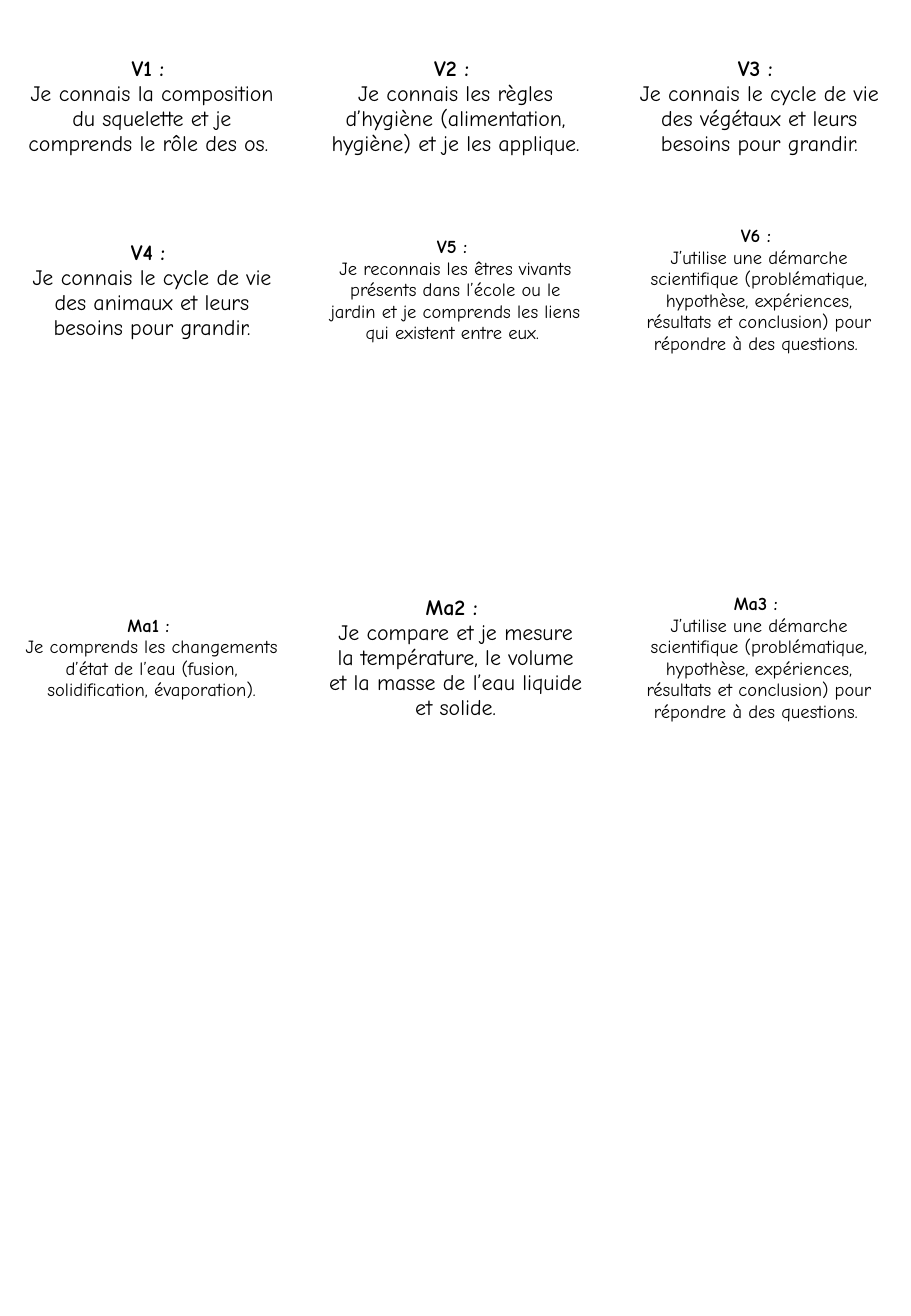
from pptx import Presentation
from pptx import util as u
from pptx.dml.color import RGBColor
from pptx.enum import text

PX = 9144  # 100 px to the inch
COLS, ROWS = 3, 7
FONT = "Comic Neue"
LARGE, SMALL = 13, 11

METHOD = ("J’utilise une démarche scientifique (problématique, hypothèse, "
          "expériences, résultats et conclusion) pour répondre à des questions. ")

# Skills by table row: code, size, sentence
SKILLS = {
    0: [("V1", LARGE, "Je connais la composition du squelette et je comprends "
                      "le rôle des os. "),
        ("V2", LARGE, "Je connais les règles d’hygiène (alimentation, hygiène) "
                      "et je les applique. "),
        ("V3", LARGE, "Je connais le cycle de vie des végétaux et leurs "
                      "besoins pour grandir.")],
    1: [("V4", LARGE, "Je connais le cycle de vie des animaux et leurs "
                      "besoins pour grandir."),
        ("V5", SMALL, "Je reconnais les êtres vivants présents dans l’école ou "
                      "le jardin et je comprends les liens qui existent entre eux. "),
        ("V6", SMALL, METHOD)],
    3: [("Ma1", SMALL, "Je comprends les changements d’état de l’eau (fusion, "
                       "solidification, évaporation)."),
        ("Ma2", LARGE, "Je compare et je mesure la température, le volume et "
                       "la masse de l’eau liquide et solide."),
        ("Ma3", SMALL, METHOD)],
}


def px(n):
    return u.Emu(round(n * PX))


def paint(fill, color):
    fill.solid()
    fill.fore_color.rgb = RGBColor.from_string(color)


def put(target, values):
    for name, value in values.items():
        setattr(target, name, value)


def write(cell, code, size, line):
    """Fill one cell with a bold code above its sentence."""
    frame = cell.text_frame
    frame.text = f"{code} : \n{line}"
    for i, para in enumerate(frame.paragraphs):
        para.alignment = text.PP_ALIGN.CENTER
        font = para.runs[0].font
        put(font, {"name": FONT, "size": u.Pt(size), "bold": i == 0})
        paint(font.fill, "000000")


def grid(slide, x, y, w, h):
    """Draw the skill cards as equal cells of the given box."""
    table = slide.shapes.add_table(ROWS, COLS, px(x), px(y), px(w), px(h)).table
    put(table, {"first_row": False, "horz_banding": False})
    for col in table.columns:
        col.width = px(w / COLS)
    for row in table.rows:
        row.height = px(h / ROWS)
    for cell in table.iter_cells():
        paint(cell.fill, "FFFFFF")
        put(cell, {"margin_left": px(21), "margin_right": px(21),
                   "margin_top": px(14), "margin_bottom": px(14),
                   "vertical_anchor": text.MSO_ANCHOR.MIDDLE})
    for r, cards in SKILLS.items():
        for c, card in enumerate(cards):
            write(table.cell(r, c), *card)


def main():
    prs = Presentation()
    put(prs, {"slide_width": px(750), "slide_height": px(1083)})
    slide = prs.slides.add_slide(prs.slide_layouts[6])
    paint(slide.background.fill, "FFFFFF")
    grid(slide, 0, 12, 750, 1060)
    prs.save("out.pptx")


if __name__ == "__main__":
    main()
